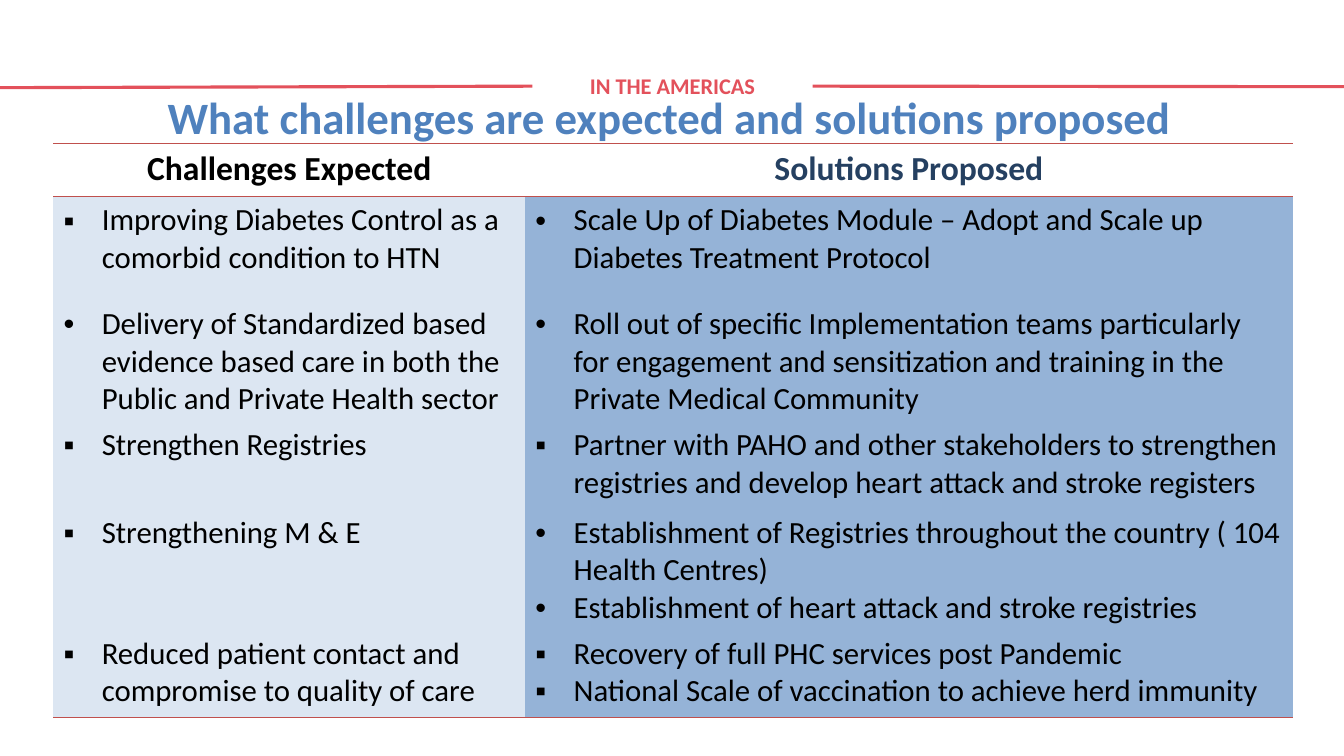
from dataclasses import dataclass

from lxml import etree
from pptx import Presentation
from pptx import util as u
from pptx.dml.color import RGBColor
from pptx.enum import shapes, text
from pptx.oxml import ns


@dataclass(frozen=True)
class Theme:
    face: str = "Calibri"
    coral: str = "E3515B"
    blue: str = "4F81BD"
    navy: str = "254061"
    black: str = "000000"
    rule: str = "C0504D"
    pale: str = "DCE6F2"
    mid: str = "95B3D7"
    label: int = 16
    title: int = 32
    head: int = 24
    body: int = 22


THEME = Theme()
SQUARE, DOT = "▪", "•"
WIDTHS = (4.68, 7.61)
HEIGHTS = (0.53, 1.03, 1.2, 0.87, 1.2, 0.87)
HEADS = (("Challenges Expected", THEME.black), ("Solutions Proposed", THEME.navy))
ROWS = (
    ((SQUARE, "Improving Diabetes Control as a comorbid condition to HTN"),
     (DOT, "Scale Up of Diabetes Module – Adopt and Scale up Diabetes Treatment Protocol")),
    ((DOT, "Delivery of Standardized based evidence based care in both the "
           "Public and Private Health sector"),
     (DOT, "Roll out of specific Implementation teams particularly for engagement "
           "and sensitization and training in the Private Medical Community")),
    ((SQUARE, "Strengthen Registries"),
     (SQUARE, "Partner with PAHO and other stakeholders to strengthen registries "
              "and develop heart attack and stroke registers")),
    ((SQUARE, "Strengthening M & E"),
     (DOT, "Establishment of Registries throughout the country ( 104 Health Centres)",
      "Establishment of heart attack and stroke registries")),
    ((SQUARE, "Reduced patient contact and compromise to quality of care"),
     (SQUARE, "Recovery of full PHC services post Pandemic",
      "National Scale of vaccination to achieve herd immunity")),
)


def style(para, size, color, bold=False):
    font = para.font
    font.name, font.size, font.bold = THEME.face, u.Pt(size), bold
    font.color.rgb = RGBColor.from_string(color)


def add_node(parent, tag, **attrs):
    return etree.SubElement(parent, ns.qn(tag), attrs)


def add_text(slide, words, box, size, color):
    shape = slide.shapes.add_textbox(*map(u.Inches, box))
    frame = shape.text_frame
    frame.word_wrap = True
    para = frame.paragraphs[0]
    para.text = words
    para.alignment = text.PP_ALIGN.CENTER
    style(para, size, color, True)
    return shape


def add_line(slide, start, end):
    line = slide.shapes.add_connector(
        shapes.MSO_CONNECTOR.STRAIGHT, *map(u.Inches, start + end))
    line.line.color.rgb = RGBColor.from_string(THEME.coral)
    line.line.width = u.Pt(2.25)
    add_node(line._element.spPr, "a:effectLst")
    return line


def add_rule(cell, *sides):
    props = cell._tc.get_or_add_tcPr()
    for side in sides:
        line = add_node(props, f"a:ln{side}", w=str(u.Pt(1)))
        fill = add_node(line, "a:solidFill")
        add_node(fill, "a:srgbClr", val=THEME.rule)


def fill_head(cell, words, color):
    add_rule(cell, "T", "B")
    cell.fill.background()
    para = cell.text_frame.paragraphs[0]
    para.text = words
    para.alignment = text.PP_ALIGN.CENTER
    style(para, THEME.head, color, True)


def fill_body(cell, mark, items, color):
    cell.fill.solid()
    cell.fill.fore_color.rgb = RGBColor.from_string(color)
    frame = cell.text_frame
    for index, words in enumerate(items):
        para = frame.add_paragraph() if index else frame.paragraphs[0]
        para.text = words
        props = para._p.get_or_add_pPr()
        props.set("marL", str(u.Inches(0.38)))
        props.set("indent", str(-u.Inches(0.38)))
        add_node(props, "a:buFont", typeface="Arial")
        add_node(props, "a:buChar", char=mark)
        style(para, THEME.body, THEME.black)


def add_grid(slide):
    box = (0.53, 1.42, sum(WIDTHS), sum(HEIGHTS))
    table = slide.shapes.add_table(
        len(HEIGHTS), len(WIDTHS), *map(u.Inches, box)).table
    plain = "{2D5ABB26-0587-4C30-8999-92F81FD0307C}"
    table._tbl.tblPr.find(ns.qn("a:tableStyleId")).text = plain
    table.horz_banding = False
    for column, width in zip(table.columns, WIDTHS):
        column.width = u.Inches(width)
    for row, height in zip(table.rows, HEIGHTS):
        row.height = u.Inches(height)
    for col, (words, color) in enumerate(HEADS):
        fill_head(table.cell(0, col), words, color)
    for row, pair in enumerate(ROWS, 1):
        for col, (mark, *items) in enumerate(pair):
            cell = table.cell(row, col)
            if row == len(ROWS):
                add_rule(cell, "B")
            fill_body(cell, mark, items, (THEME.pale, THEME.mid)[col])


def add_banner(slide):
    label = add_text(slide, "IN THE AMERICAS", (5.28, 0.67, 2.78, 0.37),
                     THEME.label, THEME.coral)
    label.text_frame.auto_size = text.MSO_AUTO_SIZE.SHAPE_TO_FIT_TEXT
    add_line(slide, (0, 0.87), (5.28, 0.86)).end_connect(label, 1)
    add_line(slide, (8.07, 0.87), (13.35, 0.86)).begin_connect(label, 3)


def add_title(slide):
    title = add_text(slide, "What challenges are expected and solutions proposed",
                     (0.39, 0.8, 12, 0.62), THEME.title, THEME.blue)
    para = title.text_frame.paragraphs[0]
    para.line_spacing = 1.07
    para.space_after = u.Pt(8)
    para._p.get_or_add_pPr().set("marL", str(u.Inches(0.5)))


def main():
    deck = Presentation()
    deck.slide_width, deck.slide_height = u.Inches(13.33), u.Inches(7.5)
    slide = deck.slides.add_slide(deck.slide_layouts[6])
    add_banner(slide)
    add_grid(slide)
    add_title(slide)
    deck.save("out.pptx")


if __name__ == "__main__":
    main()
